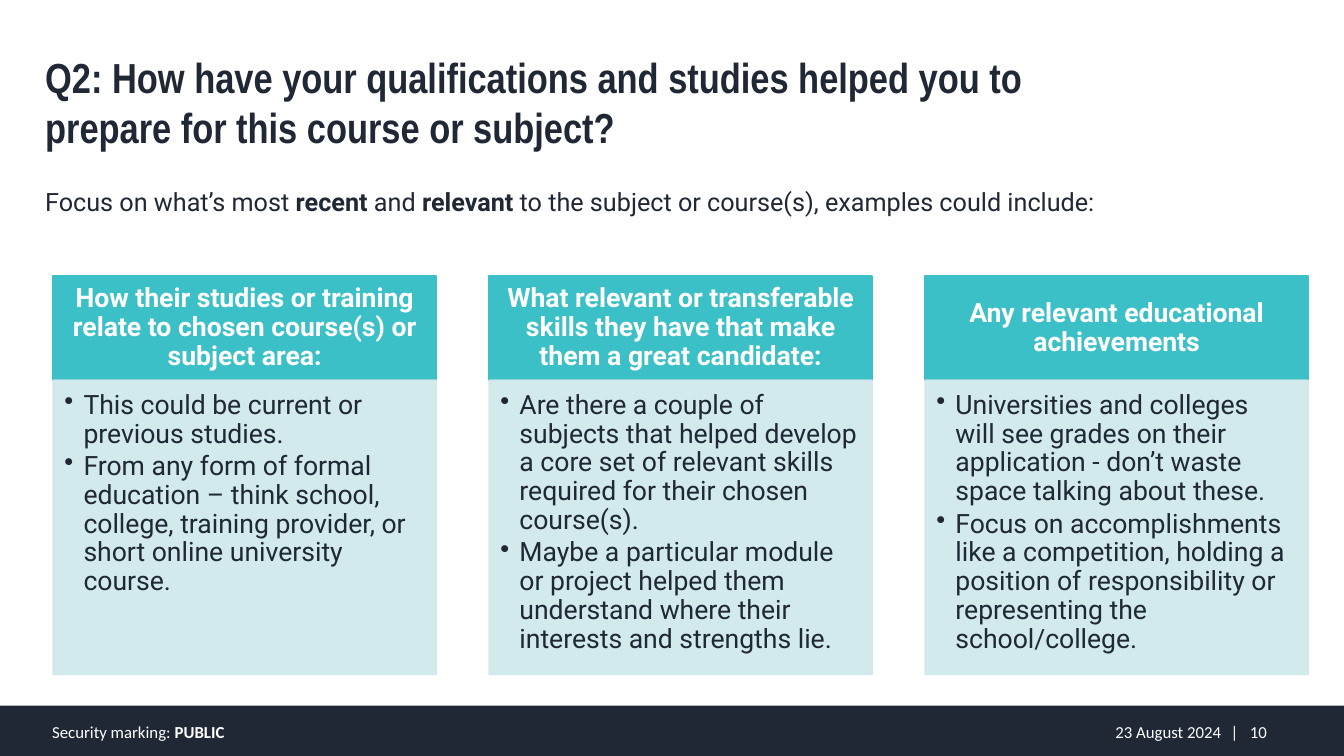
from lxml.etree import SubElement
from pptx import Presentation
from pptx.dml.color import RGBColor
from pptx.enum.shapes import MSO_SHAPE as Shape
from pptx.enum.text import MSO_ANCHOR as Anchor, PP_ALIGN as Align
from pptx.oxml.ns import qn
from pptx.util import Pt

NAVY = RGBColor(0x1F, 0x28, 0x34)
TEAL = RGBColor(0x3B, 0xC0, 0xC7)
PALE = RGBColor(0xCE, 0xE8, 0xEB)
WHITE = RGBColor(0xFF, 0xFF, 0xFF)

COLUMN_LEFT, COLUMN_STEP, COLUMN_WIDTH = 38, 311.4, 273.6
HEADER_TOP, HEADER_HEIGHT, BODY_HEIGHT = 197.3, 74.2, 210.2
BULLET_INDENT = 13.7
PAGE_TAB = 13.7

COLUMNS = [
    ("How their studies or training relate to chosen course(s) or subject area:",
     ["This could be current or previous studies.",
      "From any form of formal education – think school, college, training "
      "provider, or short online university course."]),
    ("What relevant or transferable skills they have that make them a great candidate:",
     ["Are there a couple of subjects that helped develop a core set of "
      "relevant skills required for their chosen course(s).",
      "Maybe a particular module or project helped them understand where "
      "their interests and strengths lie."]),
    ("Any relevant educational achievements",
     ["Universities and colleges will see grades on their application - "
      "don’t waste space talking about these.",
      "Focus on accomplishments like a competition, holding a position of "
      "responsibility or representing the school/college."]),
]


def add_bullet(para):
    props = para._p.get_or_add_pPr()
    props.set("marL", str(Pt(BULLET_INDENT)))
    props.set("indent", str(-Pt(BULLET_INDENT)))
    SubElement(props, qn("a:buChar"), char="•")


def add_tab_stop(para, position):
    stops = SubElement(para._p.get_or_add_pPr(), qn("a:tabLst"))
    SubElement(stops, qn("a:tab"), pos=str(Pt(position)), algn="l")


def write(box, paragraphs, size, font, color, bold=False, align=Align.LEFT,
          anchor=Anchor.TOP, insets=(7.2, 3.6, 7.2, 3.6), line_spacing=None,
          space_after=None, bullets=False, tab=None):
    """Fill a box; each paragraph is a string whose *starred* parts are bold."""
    frame = box.text_frame
    frame.word_wrap = True
    frame.vertical_anchor = anchor
    (frame.margin_left, frame.margin_top,
     frame.margin_right, frame.margin_bottom) = map(Pt, insets)
    for index, text in enumerate(paragraphs):
        para = frame.add_paragraph() if index else frame.paragraphs[0]
        if bullets:
            add_bullet(para)
        if tab:
            add_tab_stop(para, tab)
        para.alignment = align
        para.line_spacing = line_spacing
        if space_after and index < len(paragraphs) - 1:
            para.space_after = Pt(space_after)
        for line_index, line in enumerate(text.split("\n")):
            if line_index:
                para.add_line_break()
            for part_index, part in enumerate(line.split("*")):
                if not part:
                    continue
                span = para.add_run()
                span.text = part
                span.font.size = Pt(size)
                span.font.name = font
                span.font.color.rgb = color
                span.font.bold = bold or part_index % 2 == 1


def add_panel(page, left, top, width, height, color, opacity=None, outlined=True):
    panel = page.shapes.add_shape(Shape.RECTANGLE, Pt(left), Pt(top), Pt(width), Pt(height))
    panel.shadow.inherit = False
    panel.fill.solid()
    panel.fill.fore_color.rgb = color
    if outlined:
        panel.line.color.rgb = color
        panel.line.width = Pt(1)
    else:
        panel.line.fill.background()
    if opacity:
        for tint in panel._element.spPr.iter(qn("a:srgbClr")):
            SubElement(tint, qn("a:alpha"), val=str(opacity * 1000))
    return panel


def add_text(page, left, top, width, height, text, **style):
    box = page.shapes.add_textbox(Pt(left), Pt(top), Pt(width), Pt(height))
    write(box, [text], **style)


def add_column(page, left, heading, points):
    header = add_panel(page, left, HEADER_TOP, COLUMN_WIDTH, HEADER_HEIGHT, TEAL)
    write(header, [heading], size=19, font="Roboto", color=WHITE, bold=True,
          align=Align.CENTER, anchor=Anchor.MIDDLE,
          insets=(10.6, 6, 10.6, 6), line_spacing=0.9)
    body = add_panel(page, left, HEADER_TOP + HEADER_HEIGHT, COLUMN_WIDTH,
                     BODY_HEIGHT, PALE, opacity=90)
    write(body, points, size=19, font="Roboto", color=NAVY,
          insets=(8, 8, 10.6, 12), line_spacing=0.9, space_after=2.85, bullets=True)


def add_footer(page):
    add_panel(page, 0, 504, 960, 36, NAVY, outlined=False)
    style = dict(size=12, font="Calibri", color=WHITE, anchor=Anchor.MIDDLE)
    add_text(page, 30.2, 510.5, 471, 24, "Security marking: *PUBLIC*", **style)
    add_text(page, 626.4, 510.5, 246, 24.5, "23 August 2024", align=Align.RIGHT,
             insets=(7.2, 3.6, 0, 3.6), **style)
    add_text(page, 872, 510.5, 57.6, 24, "|\t10", tab=PAGE_TAB, **style)


def main():
    deck = Presentation()
    deck.slide_width, deck.slide_height = Pt(960), Pt(540)
    page = deck.slides.add_slide(deck.slide_layouts[6])
    add_footer(page)
    add_text(page, 25.2, 33.1, 804, 80,
             "Q2: How have your qualifications and studies helped you to\n"
             "prepare for this course or subject?",
             size=30, font="Arial Narrow", color=NAVY, bold=True)
    add_text(page, 25.2, 129.6, 909, 29,
             "Focus on what’s most *recent* and *relevant* to the subject or "
             "course(s), examples could include:",
             size=18, font="Roboto", color=NAVY)
    for index, (heading, points) in enumerate(COLUMNS):
        add_column(page, COLUMN_LEFT + index * COLUMN_STEP, heading, points)
    deck.save("out.pptx")


if __name__ == "__main__":
    main()
